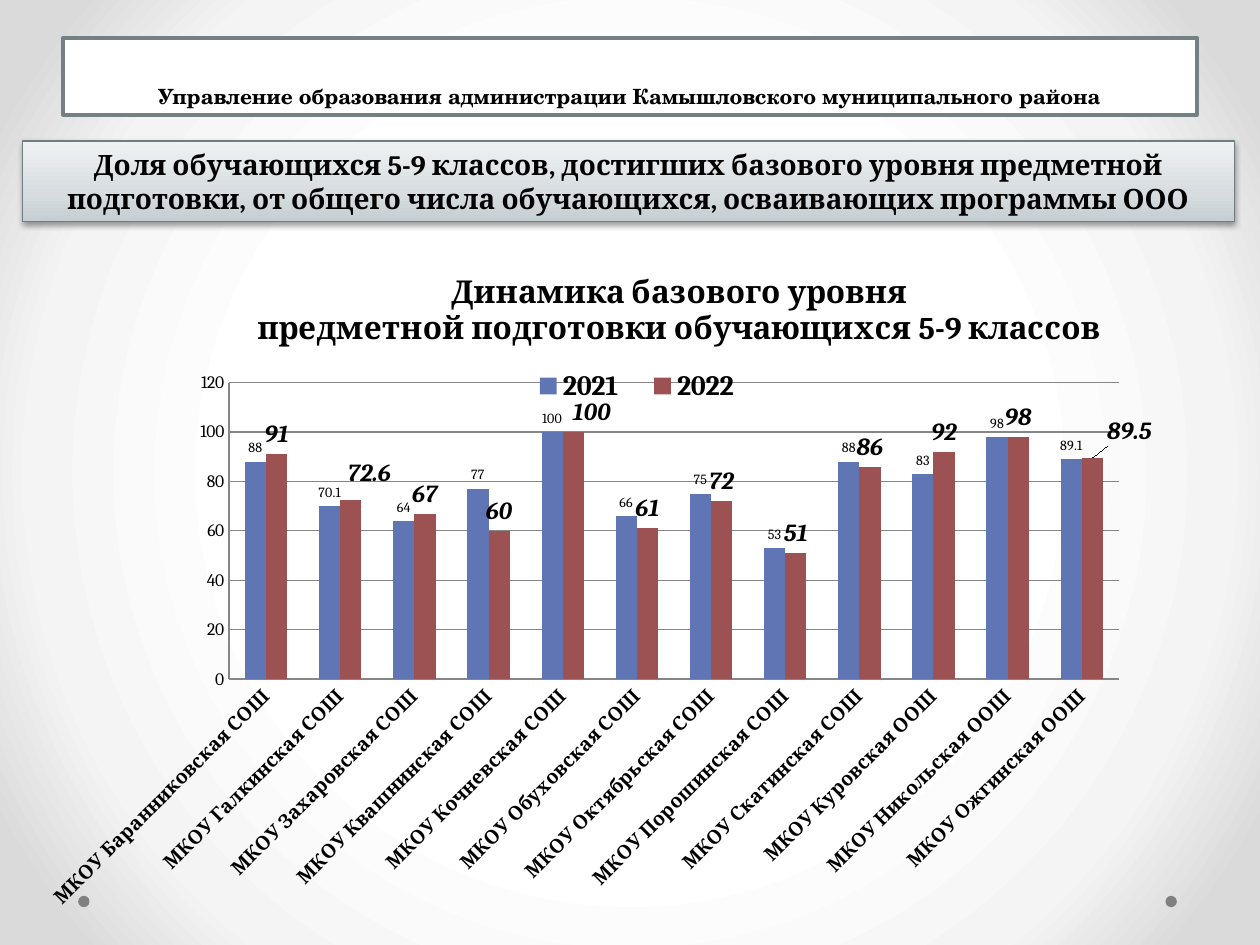
from lxml.etree import SubElement
from pptx import Presentation
from pptx.chart.data import CategoryChartData
from pptx.dml.color import RGBColor
from pptx.enum.chart import XL_CHART_TYPE, XL_LABEL_POSITION, XL_LEGEND_POSITION, XL_TICK_MARK
from pptx.enum.shapes import MSO_SHAPE
from pptx.enum.text import MSO_ANCHOR, PP_ALIGN
from pptx.oxml import parse_xml
from pptx.oxml.ns import nsdecls, qn
from pptx.util import Inches, Pt

COLORS = {
    "black": "000000", "white": "FFFFFF", "dot": "808080", "frame": "758085",
    "edge": "727D82", "grid": "868686", "2021": "6076B4", "2022": "9C5252",
}
GLOW = [(50, "FFFFFF"), (76, "F4F4F4"), (92, "DADADA")]
STEEL = [(0, "C5CED2"), (35, "D6DCDF"), (100, "EFF2F3")]
CIRCLE = ('<a:path path="circle"><a:fillToRect l="50000" t="50000" '
          'r="50000" b="50000"/></a:path>')
UPWARD = '<a:lin ang="16200000" scaled="0"/>'

SCHOOLS = [f"МКОУ {name}" for name in (
    "Баранниковская СОШ", "Галкинская СОШ", "Захаровская СОШ", "Квашнинская СОШ",
    "Кочневская СОШ", "Обуховская СОШ", "Октябрьская СОШ", "Порошинская СОШ",
    "Скатинская СОШ", "Куровская ООШ", "Никольская ООШ", "Ожгинская ООШ")]
SHARES = {
    "2021": (88, 70.1, 64, 77, 100, 66, 75, 53, 88, 83, 98, 89.1),
    "2022": (91, 72.6, 67, 60, 100, 61, 72, 51, 86, 92, 98, 89.5),
}
SHIFTS = {1: (0.015, -0.01), 4: (0.015, 0), 11: (0.03, -0.01)}


def rgb(name):
    return RGBColor.from_string(COLORS[name])


def style(font, size, face="Cambria", bold=False, italic=False):
    font.size, font.name = Pt(size), face
    font.bold, font.italic = bold, italic
    font.color.rgb = rgb("black")


def write(frame, text, size, space=None, **look):
    frame.text = text
    for para in frame.paragraphs:
        para.alignment = PP_ALIGN.CENTER
        para.line_spacing = space
        for run in para.runs:
            style(run.font, size, **look)


def blend(fill, root, stops, path):
    """Give fill a gradient; root is the element that holds it."""
    fill.gradient()
    old = next(root.iter(qn("a:gradFill")))
    marks = "".join(f'<a:gs pos="{pos * 1000}"><a:srgbClr val="{color}"/></a:gs>'
                    for pos, color in stops)
    new = parse_xml(f'<a:gradFill {nsdecls("a")} rotWithShape="1">'
                    f'<a:gsLst>{marks}</a:gsLst>{path}</a:gradFill>')
    old.getparent().replace(old, new)


def place(parent, after=None, **spots):
    """Set a manual chart layout, behind the child named by after."""
    for old in parent.findall(qn("c:layout")):
        parent.remove(old)
    layout = parse_xml(f'<c:layout {nsdecls("c")}><c:manualLayout/></c:layout>')
    for tag, val in spots.items():
        SubElement(layout[0], qn(f"c:{tag}")).set("val", str(val))
    spot = 0 if after is None else parent.index(parent.find(qn(after))) + 1
    parent.insert(spot, layout)


def add_dot(slide, left):
    dot = slide.shapes.add_shape(MSO_SHAPE.OVAL, Inches(left), Inches(7.11),
                                 Inches(0.09), Inches(0.09))
    dot.shadow.inherit = False
    dot.fill.solid()
    dot.fill.fore_color.rgb = rgb("dot")
    dot.line.fill.background()


def set_title(slide):
    title = slide.shapes.title
    title.left, title.top = Inches(0.5), Inches(0.3)
    title.width, title.height = Inches(9), Inches(0.61)
    title.fill.solid()
    title.fill.fore_color.rgb = rgb("white")
    title.line.color.rgb = rgb("frame")
    title.line.width = Pt(2.25)
    frame = title.text_frame
    frame.vertical_anchor = MSO_ANCHOR.BOTTOM
    write(frame, "Управление образования администрации Камышловского муниципального района",
          12, space=Pt(58), face="TeX Gyre Schola", bold=True)


def add_banner(slide):
    box = slide.shapes.add_shape(MSO_SHAPE.RECTANGLE, Inches(0.18), Inches(1.12),
                                 Inches(9.62), Inches(0.64))
    blend(box.fill, box._element.spPr, STEEL, UPWARD)
    box.line.color.rgb = rgb("edge")
    box.line.width = Pt(0.75)
    box.shadow.inherit = False
    glow = box._element.spPr.find(qn("a:effectLst"))
    glow.append(parse_xml(
        f'<a:outerShdw {nsdecls("a")} blurRad="{Pt(3.1)}" dist="{Pt(1.6)}" '
        'dir="5400000" rotWithShape="0"><a:srgbClr val="000000">'
        '<a:alpha val="38000"/></a:srgbClr></a:outerShdw>'))
    write(box.text_frame, "Доля обучающихся 5-9 классов, достигших базового уровня предметной "
          "подготовки, от общего числа обучающихся, осваивающих программы ООО", 16, bold=True)


def set_axes(chart):
    cat, val = chart.category_axis, chart.value_axis
    style(cat.tick_labels.font, 11, bold=True)
    cat._element.find(qn("c:txPr")).find(qn("a:bodyPr")).set("rot", "-2700000")
    style(val.tick_labels.font, 10)
    val.minimum_scale, val.maximum_scale, val.major_unit = 0, 120, 20
    val.has_major_gridlines = True
    for axis in (cat, val):
        axis.major_tick_mark = axis.minor_tick_mark = XL_TICK_MARK.NONE
    for line in (cat.format.line, val.format.line, val.major_gridlines.format.line):
        line.color.rgb = rgb("grid")
        line.width = Pt(0.75)


def set_bars(plot):
    plot.gap_width, plot.overlap = 150, 0
    plot.vary_by_categories = False
    looks = {"2021": {"size": 8}, "2022": {"size": 14, "bold": True, "italic": True}}
    for row in plot.series:
        row.format.fill.solid()
        row.format.fill.fore_color.rgb = rgb(row.name)
        row.invert_if_negative = False
        labels = row.data_labels
        labels.show_value = True
        labels.position = XL_LABEL_POSITION.OUTSIDE_END
        style(labels.font, **looks[row.name])
    for index, (x, y) in SHIFTS.items():
        label = row.points[index].data_label
        style(label.font, **looks[row.name])
        label.position = XL_LABEL_POSITION.OUTSIDE_END
        mark = next(item for item in row._element.iter(qn("c:dLbl"))
                    if item.find(qn("c:idx")).get("val") == str(index))
        place(mark, "c:idx", x=x, y=y)


def add_chart(slide):
    data = CategoryChartData(number_format="General")
    data.categories = SCHOOLS
    for year, vals in SHARES.items():
        data.add_series(year, vals)
    chart = slide.shapes.add_chart(XL_CHART_TYPE.COLUMN_CLUSTERED, Inches(0.15), Inches(2.02),
                                   Inches(9.81), Inches(5.35), data).chart
    style(chart.font, 10)
    title = chart.chart_title
    write(title.text_frame, "Динамика базового уровня\n"
          "предметной подготовки обучающихся 5-9 классов", 18, bold=True)
    title.include_in_layout = False
    place(title._element, "c:tx", xMode="edge", yMode="edge", x=0.19, y=0.02)
    chart.has_legend = True
    legend = chart.legend
    legend.position = XL_LEGEND_POSITION.CORNER
    legend.include_in_layout = False
    style(legend.font, 16, bold=True)
    place(legend._element, "c:legendPos", xMode="edge", yMode="edge",
          x=0.4, y=0.17, w=0.2, h=0.05)
    set_axes(chart)
    set_bars(chart.plots[0])
    place(next(chart._chartSpace.iter(qn("c:plotArea"))), layoutTarget="inner",
          xMode="edge", yMode="edge", x=0.17, y=0.19, w=0.72, h=0.44)


def main():
    deck = Presentation()
    deck.slide_width, deck.slide_height = Inches(10), Inches(7.5)
    slide = deck.slides.add_slide(deck.slide_layouts[5])
    blend(slide.background.fill, slide._element, GLOW, CIRCLE)
    for left in (0.62, 9.25):
        add_dot(slide, left)
    set_title(slide)
    add_banner(slide)
    add_chart(slide)
    deck.save("out.pptx")


if __name__ == "__main__":
    main()
